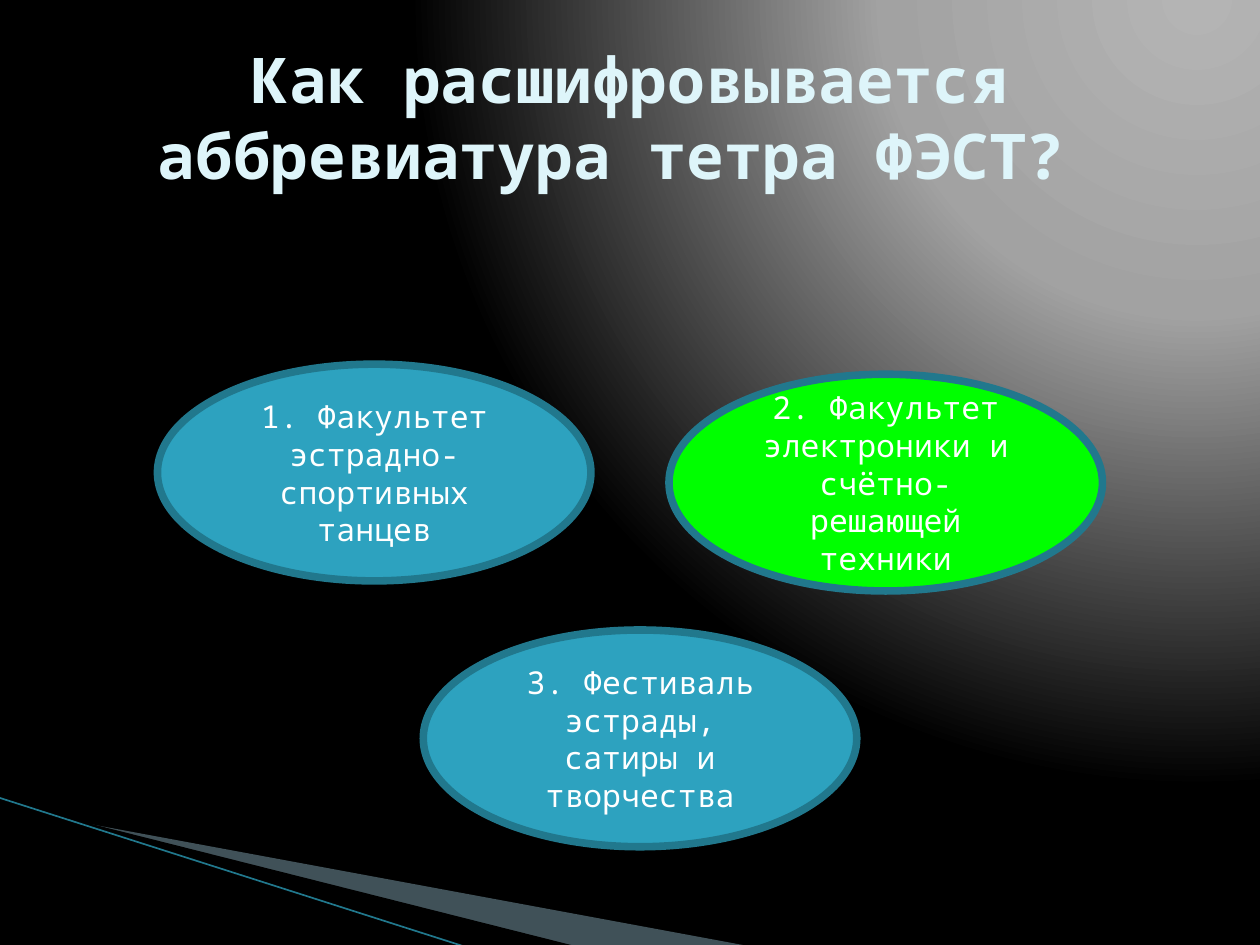
from dataclasses import dataclass

from lxml import etree
from pptx import Presentation
from pptx.dml.color import RGBColor
from pptx.enum.shapes import MSO_CONNECTOR, MSO_SHAPE
from pptx.enum.text import MSO_ANCHOR, PP_ALIGN
from pptx.oxml.ns import qn
from pptx.util import Inches, Pt

STRAIGHT = MSO_CONNECTOR.STRAIGHT
OVAL = MSO_SHAPE.OVAL
MIDDLE = MSO_ANCHOR.MIDDLE
CENTER = PP_ALIGN.CENTER


@dataclass(frozen=True)
class Theme:
    font: str = "Noto Sans Mono"
    title_size: float = 36
    answer_size: float = 18
    title: str = "DEF5FA"
    white: str = "FFFFFF"
    black: str = "000000"
    teal: str = "2DA2BF"
    outline: str = "21788D"
    correct: str = "00FF00"
    wedge: str = "A0CBDC"
    glow: tuple = ((0, "B4B4B4"), (40, "A2A2A2"), (100, "000000"))


theme = Theme()


def write_text(shape, text, size, color, bold=False):
    frame = shape.text_frame
    frame.word_wrap = True
    frame.vertical_anchor = MIDDLE
    frame.text = text
    para = frame.paragraphs[0]
    para.alignment = CENTER
    span = para.runs[0]
    span.font.name = theme.font
    span.font.size = Pt(size)
    span.font.bold = bold
    span.font.color.rgb = RGBColor.from_string(color)


def add_wedge(page, points, color):
    corners = [(Inches(x), Inches(y)) for x, y in points]
    builder = page.shapes.build_freeform(*corners[0], scale=1.0)
    builder.add_line_segments(corners[1:], close=True)
    wedge = builder.convert_to_shape()
    wedge.shadow.inherit = False
    wedge.fill.solid()
    wedge.fill.fore_color.rgb = RGBColor.from_string(color)
    wedge.line.fill.background()
    return wedge


deck = Presentation()
deck.slide_width = Inches(10)
deck.slide_height = Inches(7.5)
page = deck.slides.add_slide(deck.slide_layouts[6])

page.background.fill.gradient()
gradient = page.element.find(".//" + qn("a:gradFill"))
for child in list(gradient):
    gradient.remove(child)
stops = etree.SubElement(gradient, qn("a:gsLst"))
for position, color in theme.glow:
    stop = etree.SubElement(stops, qn("a:gs"), pos=str(position * 1000))
    etree.SubElement(stop, qn("a:srgbClr"), val=color)
radial = etree.SubElement(gradient, qn("a:path"), path="circle")
etree.SubElement(radial, qn("a:fillToRect"), l="95000", t="-106000", r="5000", b="206000")

light_wedge = add_wedge(page, [(0.55, 6.51), (5.95, 7.51), (4.56, 7.51), (0.55, 6.5)], theme.wedge)
wedge_color = light_wedge.element.spPr.find(qn("a:solidFill")).find(qn("a:srgbClr"))
etree.SubElement(wedge_color, qn("a:alpha"), val="40000")
add_wedge(page, [(0.53, 6.49), (4.57, 7.51), (3.72, 7.52), (0.54, 6.5)], theme.black)

accent = page.shapes.add_connector(STRAIGHT, Inches(-0.01), Inches(6.33), Inches(3.71), Inches(7.52))
accent.line.color.rgb = RGBColor.from_string(theme.outline)
accent.line.width = Pt(0.95)
etree.SubElement(accent.element.spPr, qn("a:effectLst"))

title = page.shapes.add_textbox(Inches(0.5), Inches(0.3), Inches(9), Inches(1.25))
write_text(title, "Как расшифровывается аббревиатура тетра ФЭСТ? ", theme.title_size, theme.title, bold=True)

answers = [
    (1.25, 2.89, theme.teal, "1. Факультет эстрадно-спортивных танцев"),
    (5.31, 2.97, theme.correct, "2. Факультет электроники и счётно-решающей техники"),
    (3.36, 5, theme.teal, "3. Фестиваль эстрады, сатиры и творчества"),
]
for left, top, color, text in answers:
    answer = page.shapes.add_shape(OVAL, Inches(left), Inches(top), Inches(3.44), Inches(1.72))
    answer.shadow.inherit = False
    answer.fill.solid()
    answer.fill.fore_color.rgb = RGBColor.from_string(color)
    answer.line.color.rgb = RGBColor.from_string(theme.outline)
    answer.line.width = Pt(4.33)
    write_text(answer, text, theme.answer_size, theme.white)

deck.save("out.pptx")
